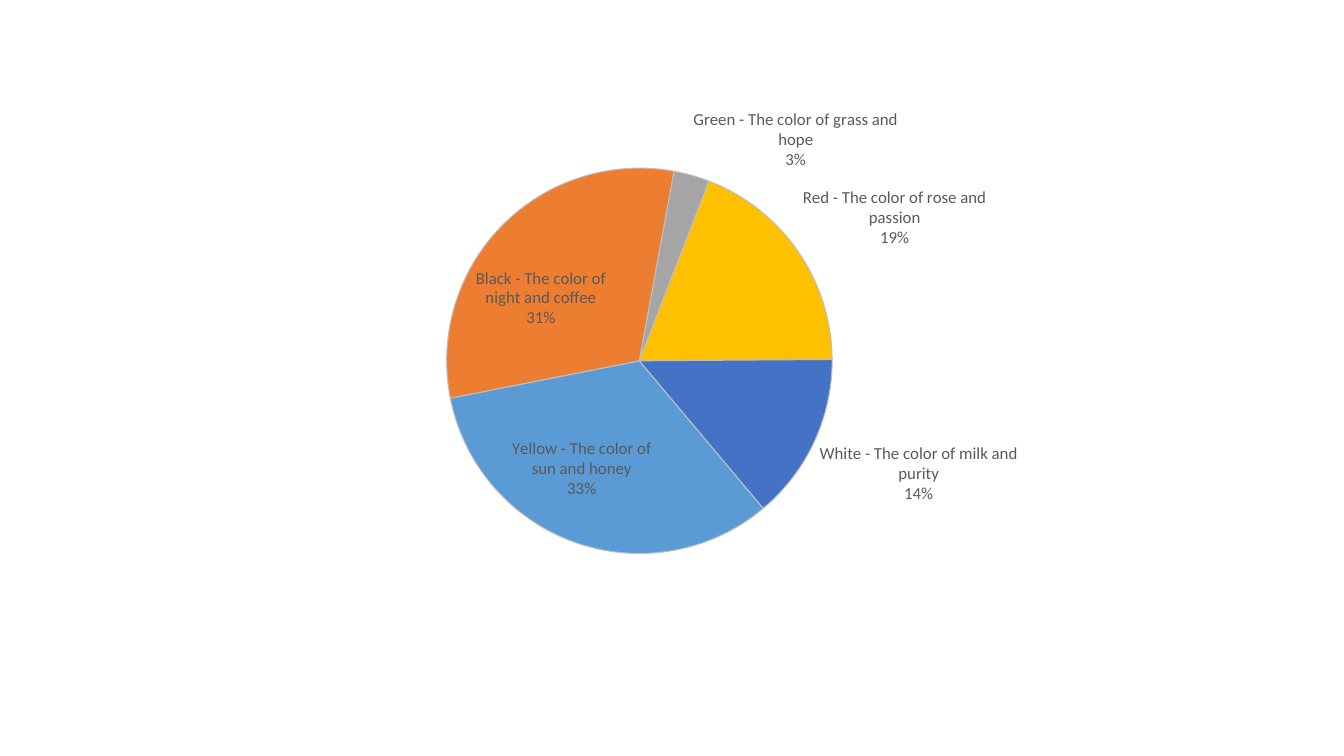
from lxml.etree import SubElement
from pptx import Presentation
from pptx.chart.data import CategoryChartData
from pptx.dml.color import RGBColor
from pptx.enum.chart import XL_CHART_TYPE, XL_LABEL_POSITION
from pptx.oxml import parse_xml
from pptx.oxml.ns import nsdecls, qn
from pptx.util import Inches, Pt

FONT = "Calibri"
INK = RGBColor(0x59, 0x59, 0x59)
EDGE = RGBColor(0xBF, 0xBF, 0xBF)
BLUE = RGBColor(0x5B, 0x9B, 0xD5)
ORANGE = RGBColor(0xED, 0x7D, 0x31)
GRAY = RGBColor(0xA5, 0xA5, 0xA5)
GOLD = RGBColor(0xFF, 0xC0, 0x00)
NAVY = RGBColor(0x44, 0x72, 0xC4)

SLICES = [
    ("Yellow - The color of sun and honey", 33, BLUE),
    ("Black - The color of night and coffee", 31, ORANGE),
    ("Green - The color of grass and hope", 3, GRAY),
    ("Red - The color of rose and passion", 19, GOLD),
    ("White - The color of milk and purity", 14, NAVY),
]

deck = Presentation()
deck.slide_width = Inches(13.33)
deck.slide_height = Inches(7.5)
slide = deck.slides.add_slide(deck.slide_layouts[6])

data = CategoryChartData()
data.categories = [name for name, share, color in SLICES]
data.add_series("Series 1", [share for name, share, color in SLICES])
chart = slide.shapes.add_chart(
    XL_CHART_TYPE.PIE, Inches(0.97), Inches(0.07), Inches(10.39), Inches(7.23), data
).chart
chart.has_title = False
chart.has_legend = False
chart.font.name = FONT
chart.font.size = Pt(10)

plot = chart.plots[0]
plot.vary_by_categories = True
series = plot.series[0]
for index, (name, share, color) in enumerate(SLICES):
    look = series.points[index].format
    look.fill.solid()
    look.fill.fore_color.rgb = color
    look.line.color.rgb = EDGE
    look.line.width = Pt(0.75)

labels = series.data_labels
labels.show_value = False
labels.show_category_name = True
labels.show_percentage = True
labels.number_format = "0%"
labels.number_format_is_linked = False
labels.position = XL_LABEL_POSITION.BEST_FIT
labels.font.name = FONT
labels.font.size = Pt(12)
labels.font.color.rgb = INK

root = chart.element
bubble = root.find(".//" + qn("c:ser") + "/" + qn("c:dLbls") + "/" + qn("c:showBubbleSize"))
bubble.addnext(parse_xml(f"<c:separator {nsdecls('c')}>\n</c:separator>"))

pie = root.find(".//" + qn("c:pieChart"))
angle = pie.find(qn("c:firstSliceAng"))
if angle is None:
    angle = SubElement(pie, qn("c:firstSliceAng"))
angle.set("val", "140")

area = root.find(".//" + qn("c:plotArea"))
for old in area.findall(qn("c:layout")):
    area.remove(old)
layout = parse_xml(f"<c:layout {nsdecls('c')}/>")
area.insert(0, layout)
manual = SubElement(layout, qn("c:manualLayout"))
for tag, value in [
    ("layoutTarget", "inner"), ("xMode", "edge"), ("yMode", "edge"),
    ("x", "0.333"), ("y", "0.221"), ("w", "0.368"), ("h", "0.529"),
]:
    SubElement(manual, qn("c:" + tag)).set("val", value)

deck.save("out.pptx")
